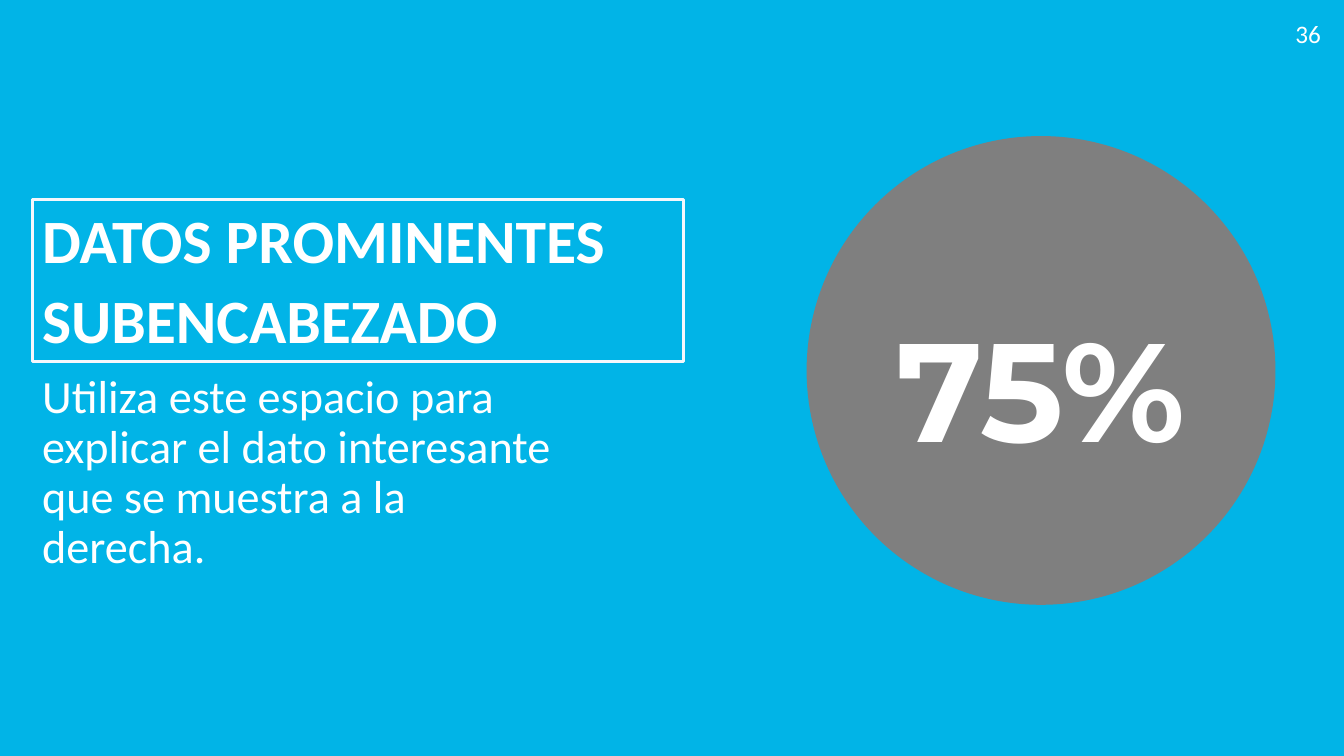
from dataclasses import dataclass

from pptx import Presentation
from pptx.dml.color import RGBColor
from pptx.enum.shapes import MSO_SHAPE
from pptx.enum.text import MSO_ANCHOR, PP_ALIGN
from pptx.slide import Slide
from pptx.util import Emu, Pt

PX = 9144  # 100 px to the inch
SLIDE_W, SLIDE_H = 1333, 750

CYAN = RGBColor(0x01, 0xB4, 0xE7)
GRAY = RGBColor(0x7F, 0x7F, 0x7F)
WHITE = RGBColor(0xFF, 0xFF, 0xFF)
FRAME = RGBColor(0xF5, 0xF7, 0xFC)


@dataclass(frozen=True)
class Box:
    left: int
    top: int
    width: int
    height: int

    def emu(self) -> tuple[Emu, ...]:
        return tuple(Emu(n * PX) for n in (self.left, self.top, self.width, self.height))


def add_panel(slide: Slide, kind: MSO_SHAPE, box: Box, *, fill: RGBColor | None = None,
              line: RGBColor | None = None):
    sp = slide.shapes.add_shape(kind, *box.emu())
    sp.shadow.inherit = False
    if fill is None:
        sp.fill.background()
    else:
        sp.fill.solid()
        sp.fill.fore_color.rgb = fill
    if line is None:
        sp.line.fill.background()
    else:
        sp.line.color.rgb = line
        sp.line.width = Pt(2)
    return sp


def write(sp, *lines: str, size: int, font: str = "Calibri", bold: bool = False,
          align: PP_ALIGN = PP_ALIGN.LEFT, anchor: MSO_ANCHOR = MSO_ANCHOR.TOP,
          spacing: float = 1.0, gap: int = 0) -> None:
    """Write one paragraph per line, with gap points between paragraphs."""
    tf = sp.text_frame
    tf.word_wrap = True
    tf.vertical_anchor = anchor
    for i, text in enumerate(lines):
        p = tf.add_paragraph() if i else tf.paragraphs[0]
        p.alignment = align
        p.line_spacing = spacing
        p.space_before = Pt(gap if i else 0)
        r = p.add_run()
        r.text = text
        r.font.name = font
        r.font.size = Pt(size)
        r.font.bold = bold
        r.font.color.rgb = WHITE


def main() -> None:
    prs = Presentation()
    prs.slide_width, prs.slide_height = Emu(SLIDE_W * PX), Emu(SLIDE_H * PX)
    slide = prs.slides.add_slide(prs.slide_layouts[6])

    add_panel(slide, MSO_SHAPE.RECTANGLE, Box(0, 0, SLIDE_W, SLIDE_H), fill=CYAN)

    explanation = slide.shapes.add_textbox(*Box(32, 366, 545, 216).emu())
    write(explanation, "Utiliza este espacio para explicar el dato interesante "
          "que se muestra a la derecha.", size=33, spacing=0.9)

    heading = add_panel(slide, MSO_SHAPE.RECTANGLE, Box(32, 198, 646, 161), line=FRAME)
    write(heading, "DATOS PROMINENTES", "SUBENCABEZADO", size=44, bold=True,
          anchor=MSO_ANCHOR.BOTTOM, spacing=0.9, gap=10)

    page_number = slide.shapes.add_textbox(*Box(1274, 13, 46, 40).emu())
    write(page_number, "36", size=18, align=PP_ALIGN.RIGHT)

    add_panel(slide, MSO_SHAPE.OVAL, Box(800, 135, 465, 465), fill=GRAY)
    figure = slide.shapes.add_textbox(*Box(800, 295, 465, 178).emu())
    write(figure, "75%", size=100, font="Montserrat", bold=True, align=PP_ALIGN.CENTER)

    prs.save("out.pptx")


if __name__ == "__main__":
    main()
